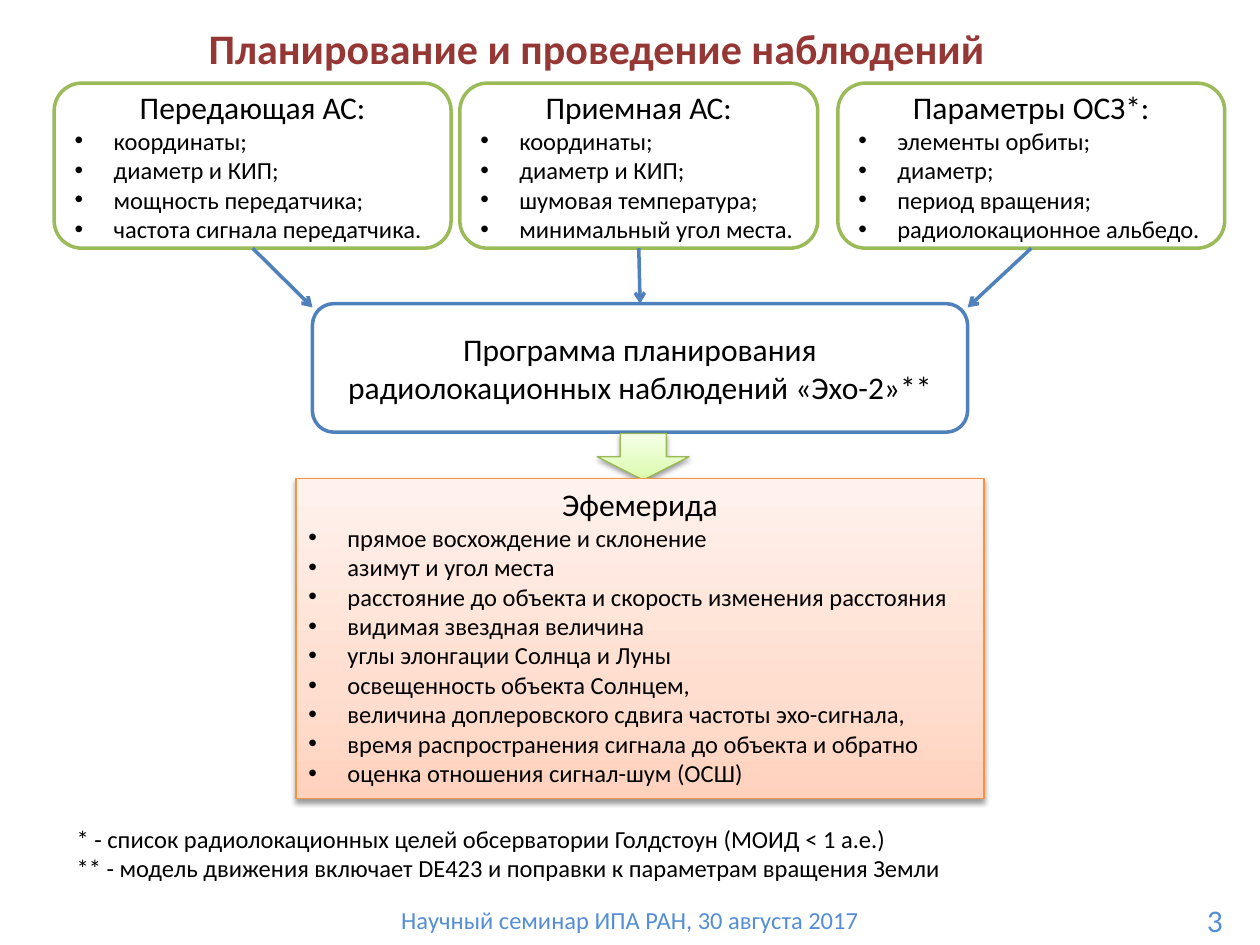
"""Build the slide on planning and carrying out radar observations."""
from lxml import etree
from pptx import Presentation
from pptx.dml.color import RGBColor
from pptx.enum.shapes import MSO_CONNECTOR, MSO_SHAPE
from pptx.enum.text import MSO_ANCHOR, PP_ALIGN
from pptx.oxml import parse_xml
from pptx.oxml.ns import qn
from pptx.util import Inches, Pt

LEFT, CENTER = PP_ALIGN.LEFT, PP_ALIGN.CENTER
TOP, MIDDLE = MSO_ANCHOR.TOP, MSO_ANCHOR.MIDDLE
ROUND, RECT, DOWN = MSO_SHAPE.ROUNDED_RECTANGLE, MSO_SHAPE.RECTANGLE, MSO_SHAPE.DOWN_ARROW
STRAIGHT = MSO_CONNECTOR.STRAIGHT
NS = 'xmlns:a="http://schemas.openxmlformats.org/drawingml/2006/main"'
BLUE, GREEN, PALE = "4F81BD", "9BBB59", "558ED5"
rgb = RGBColor.from_string


def write(shape, lines, size, align=LEFT, color="000000", bold=False, anchor=TOP, items=()):
    frame = shape.text_frame
    frame.text = "\n".join([*lines, *items])
    frame.word_wrap = True
    frame.vertical_anchor = anchor
    for i, para in enumerate(frame.paragraphs):
        item = i >= len(lines)
        para.alignment = LEFT if item else align
        if item:
            props = para._p.get_or_add_pPr()
            props.set("marL", str(Inches(0.31)))
            props.set("indent", str(-Inches(0.31)))
            etree.SubElement(props, qn("a:buFont")).set("typeface", "Arial")
            etree.SubElement(props, qn("a:buChar")).set("char", "•")
        for run in para.runs:
            run.font.name = "Calibri"
            run.font.size = Pt(14 if item else size)
            run.font.bold = bold
            run.font.color.rgb = rgb(color)


def block(kind, box, line, width, fills):
    shape = slide.shapes.add_shape(kind, *map(Inches, box))
    shape.shadow.inherit = False
    shape.line.color.rgb = rgb(line)
    shape.line.width = Pt(width)
    if len(fills) == 1:
        shape.fill.solid()
        shape.fill.fore_color.rgb = rgb(fills[0])
        return shape
    stops = "".join(f'<a:gs pos="{pos}"><a:srgbClr val="{tone}"/></a:gs>'
                    for pos, tone in zip((0, 35000, 100000), fills))
    props = shape._element.spPr
    props.find(qn("a:prstGeom")).addnext(parse_xml(
        f'<a:gradFill {NS} rotWithShape="1"><a:gsLst>{stops}</a:gsLst>'
        '<a:lin ang="16200000" scaled="0"/></a:gradFill>'))
    props.find(qn("a:effectLst")).append(parse_xml(
        f'<a:outerShdw {NS} blurRad="{Pt(3.1)}" dist="{Pt(1.6)}" dir="5400000" rotWithShape="0">'
        '<a:srgbClr val="000000"><a:alpha val="38000"/></a:srgbClr></a:outerShdw>'))
    return shape


deck = Presentation()
deck.slide_width, deck.slide_height = Inches(10), Inches(7.5)
slide = deck.slides.add_slide(deck.slide_layouts[5])

title = slide.shapes.title
title.left, title.top, title.width, title.height = map(Inches, (0.31, 0.13, 8.85, 0.5))
write(title, ["Планирование и проведение наблюдений"], 24, CENTER, "953735", True, MIDDLE)

plan = block(ROUND, (2.48, 2.41, 5.2, 1.02), BLUE, 2, ["FFFFFF"])
write(plan, ["Программа планирования радиолокационных наблюдений «Эхо-2»**"],
      18, CENTER, anchor=MIDDLE)

inputs = [
    (0.43, 3.15, 2.48, 2.44, "Передающая АС:",
     ["координаты;", "диаметр и КИП;", "мощность передатчика;", "частота сигнала передатчика."]),
    (3.65, 2.84, 5.08, 2.41, "Приемная АС:",
     ["координаты;", "диаметр и КИП;", "шумовая температура;", "минимальный угол места."]),
    (6.65, 3.07, 7.68, 2.44, "Параметры ОСЗ*:",
     ["элементы орбиты;", "диаметр;", "период вращения;", "радиолокационное альбедо."]),
]
for left, width, tip, end, head, items in inputs:
    card = block(ROUND, (left, 0.66, width, 1.31), GREEN, 2, ["FFFFFF"])
    write(card, [head], 18, CENTER, anchor=MIDDLE, items=items)
    arrow = slide.shapes.add_connector(
        STRAIGHT, Inches(left + width / 2), Inches(1.97), Inches(tip), Inches(end))
    arrow.line.color.rgb = rgb(BLUE)
    arrow.line.width = Pt(2)
    etree.SubElement(arrow.line._get_or_add_ln(), qn("a:tailEnd")).set("type", "arrow")
    etree.SubElement(arrow._element.spPr, qn("a:effectLst"))

block(DOWN, (4.74, 3.44, 0.73, 0.37), "98B955", 0.75, ["DAFDA7", "E4FCC2", "F5FFE7"])
result = block(RECT, (2.35, 3.8, 5.46, 2.54), "F69240", 0.75, ["FFD2BD", "FFDED0", "FFF2ED"])
write(result, ["Эфемерида"], 18, CENTER, items=[
    "прямое восхождение и склонение",
    "азимут и угол места",
    "расстояние до объекта и скорость изменения расстояния",
    "видимая звездная величина",
    "углы элонгации Солнца и Луны",
    "освещенность объекта Солнцем,",
    "величина доплеровского сдвига частоты эхо-сигнала,",
    "время распространения сигнала до объекта и обратно",
    "оценка отношения сигнал-шум (ОСШ)",
])

notes = ["* - список радиолокационных целей обсерватории Голдстоун (МОИД < 1 а.е.)",
         "** - модель движения включает DE423 и поправки к параметрам вращения Земли"]
labels = [
    ((0.51, 6.49, 8.27, 0.57), notes, 14, LEFT, "000000"),
    ((0, 7.13, 10, 0.34), ["Научный семинар ИПА РАН, 30 августа 2017"], 14, CENTER, PALE),
    ((9.48, 7.1, 0.52, 0.4), ["3"], 18, LEFT, PALE),
]
for box, lines, size, align, color in labels:
    write(slide.shapes.add_textbox(*map(Inches, box)), lines, size, align, color)

deck.save("out.pptx")
